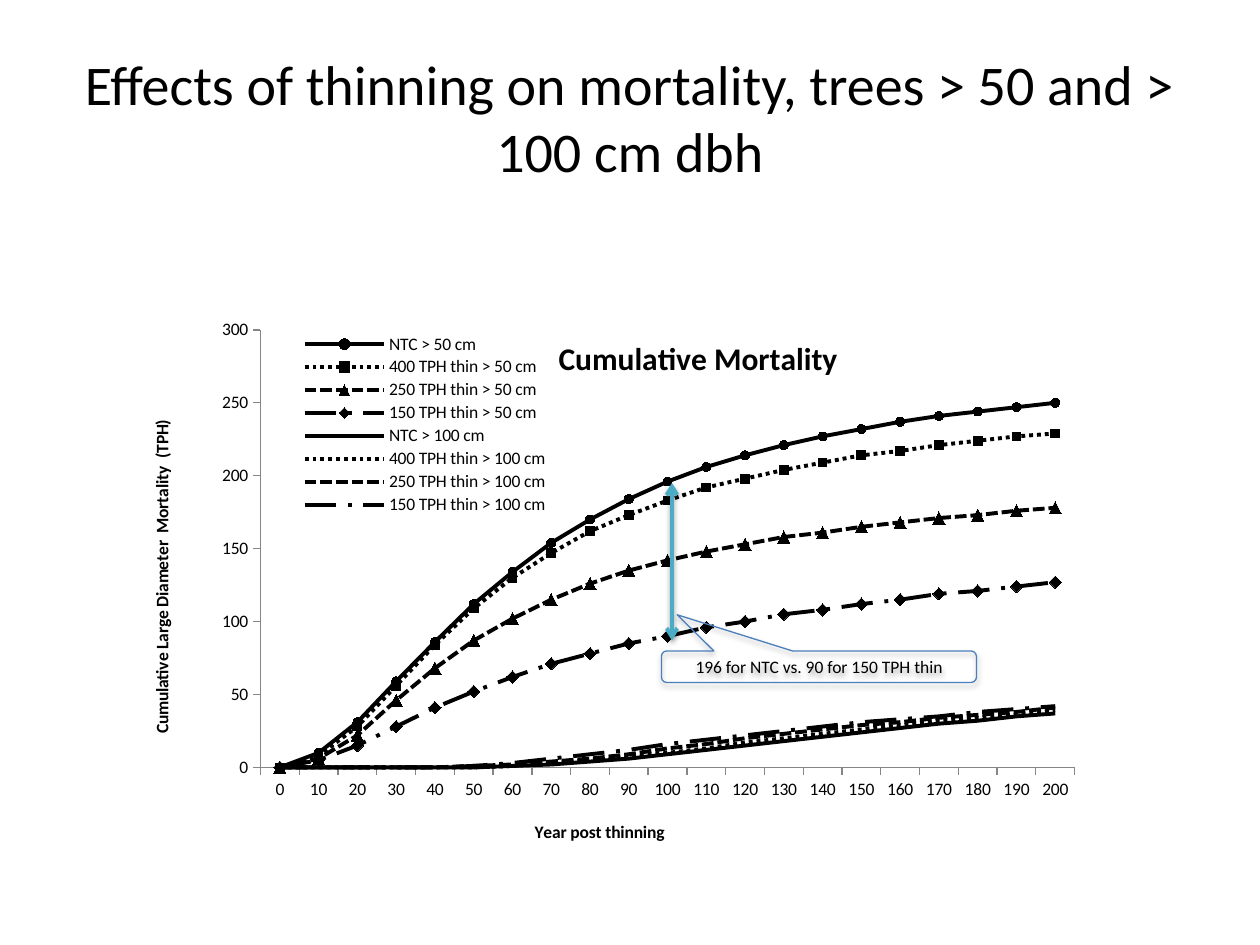
import pptx
import pptx.chart.data
import pptx.dml.color
import pptx.enum.chart
import pptx.enum.dml
import pptx.enum.shapes
import pptx.enum.text
import pptx.oxml
import pptx.oxml.ns
import pptx.util
from pptx.util import Pt

BLACK = pptx.dml.color.RGBColor(0x00, 0x00, 0x00)
TEAL = pptx.dml.color.RGBColor(0x4B, 0xAC, 0xC6)
BLUE = pptx.dml.color.RGBColor(0x4B, 0x7E, 0xBC)
GREY = pptx.dml.color.RGBColor(0x86, 0x86, 0x86)
FONT = "Calibri"

DASH = pptx.enum.dml.MSO_LINE
MARKER = pptx.enum.chart.XL_MARKER_STYLE

# Each treatment: name, dash, marker, marker size
TREATMENTS = [
    ("NTC", None, MARKER.CIRCLE, 5),
    ("400 TPH thin", DASH.ROUND_DOT, MARKER.SQUARE, 5),
    ("250 TPH thin", DASH.SQUARE_DOT, MARKER.TRIANGLE, 7),
    ("150 TPH thin", DASH.LONG_DASH_DOT, MARKER.DIAMOND, 7),
]
# Cumulative mortality per diameter limit, in treatment order
MORTALITY = {
    "50 cm": [
        [0, 10, 31, 59, 86, 112, 134, 154, 170, 184, 196,
         206, 214, 221, 227, 232, 237, 241, 244, 247, 250],
        [0, 8, 28, 56, 84, 109, 130, 147, 162, 173, 183,
         192, 198, 204, 209, 214, 217, 221, 224, 227, 229],
        [0, 6, 22, 46, 68, 87, 102, 115, 126, 135, 142,
         148, 153, 158, 161, 165, 168, 171, 173, 176, 178],
        [0, 5, 15, 28, 41, 52, 62, 71, 78, 85, 90,
         96, 100, 105, 108, 112, 115, 119, 121, 124, 127],
    ],
    "100 cm": [
        [0, 0, 0, 0, 0, 0, 1, 2, 4, 6, 9,
         12, 15, 18, 21, 24, 27, 30, 32, 35, 37],
        [0, 0, 0, 0, 0, 0, 1, 3, 5, 7, 10,
         13, 17, 20, 23, 26, 29, 32, 34, 36, 39],
        [0, 0, 0, 0, 0, 1, 2, 4, 6, 9, 13,
         16, 20, 23, 26, 29, 31, 34, 36, 38, 41],
        [0, 0, 0, 0, 0, 1, 3, 6, 9, 12, 16,
         19, 22, 25, 28, 31, 33, 35, 38, 40, 42],
    ],
}


def add_run(text_frame, text, size, bold=False):
    run = text_frame.paragraphs[0].add_run()
    run.text = text
    run.font.name = FONT
    run.font.size = Pt(size)
    run.font.bold = bold
    run.font.color.rgb = BLACK


def add_shadow(shape, distance, opacity):
    """Give the shape a soft shadow straight below it."""
    shape._element.spPr.append(pptx.oxml.parse_xml(
        f'<a:effectLst {pptx.oxml.ns.nsdecls("a")}>'
        f'<a:outerShdw blurRad="{Pt(3.1)}" dist="{Pt(distance)}" dir="5400000" rotWithShape="0">'
        f'<a:srgbClr val="{BLACK}"><a:alpha val="{opacity * 1000}"/></a:srgbClr>'
        '</a:outerShdw></a:effectLst>'))


def place_in_chart(element, x, y, width=None, height=None, inner=False):
    """Set a manual layout, in fractions of the chart."""
    for old_layout in element.findall(pptx.oxml.ns.qn("c:layout")):
        element.remove(old_layout)
    settings = [("layoutTarget", "inner")] if inner else []
    settings += [("xMode", "edge"), ("yMode", "edge"), ("x", x), ("y", y)]
    if width is not None:
        settings += [("w", width), ("h", height)]
    children = "".join(f'<c:{name} val="{value}"/>' for name, value in settings)
    layout = pptx.oxml.parse_xml(
        f'<c:layout {pptx.oxml.ns.nsdecls("c")}>'
        f'<c:manualLayout>{children}</c:manualLayout></c:layout>')
    overlay = element.find(pptx.oxml.ns.qn("c:overlay"))
    if overlay is None:
        element.insert(0, layout)
    else:
        overlay.addprevious(layout)


def add_title(slide, text):
    title = slide.shapes.title
    title.left, title.top, title.width, title.height = Pt(36), Pt(21.6), Pt(648), Pt(90)
    title.text_frame.vertical_anchor = pptx.enum.text.MSO_ANCHOR.MIDDLE
    title.text_frame.paragraphs[0].alignment = pptx.enum.text.PP_ALIGN.CENTER
    add_run(title.text_frame, text, 32)


def format_axis(axis, title, x, y):
    axis.has_major_gridlines = False
    axis.major_tick_mark = pptx.enum.chart.XL_TICK_MARK.OUTSIDE
    axis.format.line.color.rgb = GREY
    axis.format.line.width = Pt(0.75)
    add_run(axis.axis_title.text_frame, title, 10, bold=True)
    place_in_chart(axis.axis_title._element, x, y)


def format_series(series, dash, marker, marker_size):
    series.smooth = False
    series.format.line.color.rgb = BLACK
    series.format.line.width = Pt(2.25)
    if dash is not None:
        series.format.line.dash_style = dash
    series.marker.style = marker
    if marker != MARKER.NONE:
        series.marker.size = marker_size
        series.marker.format.fill.solid()
        series.marker.format.fill.fore_color.rgb = BLACK
        series.marker.format.line.color.rgb = BLACK


def add_mortality_chart(slide):
    data = pptx.chart.data.CategoryChartData(number_format="0")
    data.categories = [str(year) for year in range(0, 201, 10)]
    styles = []
    for limit, rows in MORTALITY.items():
        for (name, dash, marker, size), values in zip(TREATMENTS, rows):
            data.add_series(f"{name} > {limit}", values)
            styles.append((dash, marker if limit == "50 cm" else MARKER.NONE, size))
    chart = slide.shapes.add_chart(
        pptx.enum.chart.XL_CHART_TYPE.LINE_MARKERS,
        Pt(59.8), Pt(180), Pt(609.8), Pt(305.3), data).chart
    chart.font.name = FONT
    chart.font.size = Pt(10)
    chart.font.color.rgb = BLACK
    chart.plots[0].vary_by_categories = False
    for series, style in zip(chart.plots[0].series, styles):
        format_series(series, *style)

    # Axes
    format_axis(chart.category_axis, "Year post thinning", 0.4, 0.94)
    format_axis(chart.value_axis, "Cumulative Large Diameter  Mortality  (TPH)", 0.04, 0.19)
    chart.value_axis.minimum_scale = 0
    chart.value_axis.maximum_scale = 300
    chart.value_axis.major_unit = 50
    chart.value_axis.tick_labels.number_format = "0"
    chart.value_axis.tick_labels.number_format_is_linked = False

    # Title, legend and plot area
    add_run(chart.chart_title.text_frame, "Cumulative Mortality ", 18, bold=True)
    title = chart.chart_title._element
    title.find(pptx.oxml.ns.qn("c:overlay")).set("val", "1")
    place_in_chart(title, 0.42, 0.03)
    chart.has_legend = True
    chart.legend.position = pptx.enum.chart.XL_LEGEND_POSITION.RIGHT
    chart.legend.include_in_layout = False
    place_in_chart(chart.legend._element, 0.18, 0.03, 0.24, 0.35)
    plot_area = chart._chartSpace.chart.plotArea
    place_in_chart(plot_area, 0.146, 0.028, 0.763, 0.819, inner=True)


def add_difference_arrow(slide):
    arrow = slide.shapes.add_connector(
        pptx.enum.shapes.MSO_CONNECTOR.STRAIGHT, Pt(384), Pt(276), Pt(384), Pt(366))
    arrow.line.color.rgb = TEAL
    arrow.line.width = Pt(2.25)
    for end in ("headEnd", "tailEnd"):
        arrow.line._get_or_add_ln().append(pptx.oxml.parse_xml(
            f'<a:{end} {pptx.oxml.ns.nsdecls("a")} type="arrow"/>'))
    add_shadow(arrow, 1.6, 38)


def add_callout(slide, text):
    callout = slide.shapes.add_shape(
        pptx.enum.shapes.MSO_SHAPE.ROUNDED_RECTANGULAR_CALLOUT,
        Pt(378), Pt(372), Pt(180), Pt(18))
    for index, value in enumerate((-0.45, -1.65, 0.17)):
        callout.adjustments[index] = value
    callout.fill.background()
    callout.line.color.rgb = BLUE
    callout.line.width = Pt(0.75)
    add_shadow(callout, 1.8, 35)
    callout.text_frame.word_wrap = True
    callout.text_frame.vertical_anchor = pptx.enum.text.MSO_ANCHOR.MIDDLE
    callout.text_frame.paragraphs[0].alignment = pptx.enum.text.PP_ALIGN.CENTER
    add_run(callout.text_frame, text, 10)


def main():
    presentation = pptx.Presentation()
    presentation.slide_width, presentation.slide_height = Pt(720), Pt(540)
    slide = presentation.slides.add_slide(presentation.slide_layouts[5])
    add_title(slide, "Effects of thinning on mortality, trees > 50 and > 100 cm dbh")
    add_mortality_chart(slide)
    add_difference_arrow(slide)
    add_callout(slide, "196 for NTC vs. 90 for 150 TPH thin")
    presentation.save("out.pptx")


if __name__ == "__main__":
    main()
